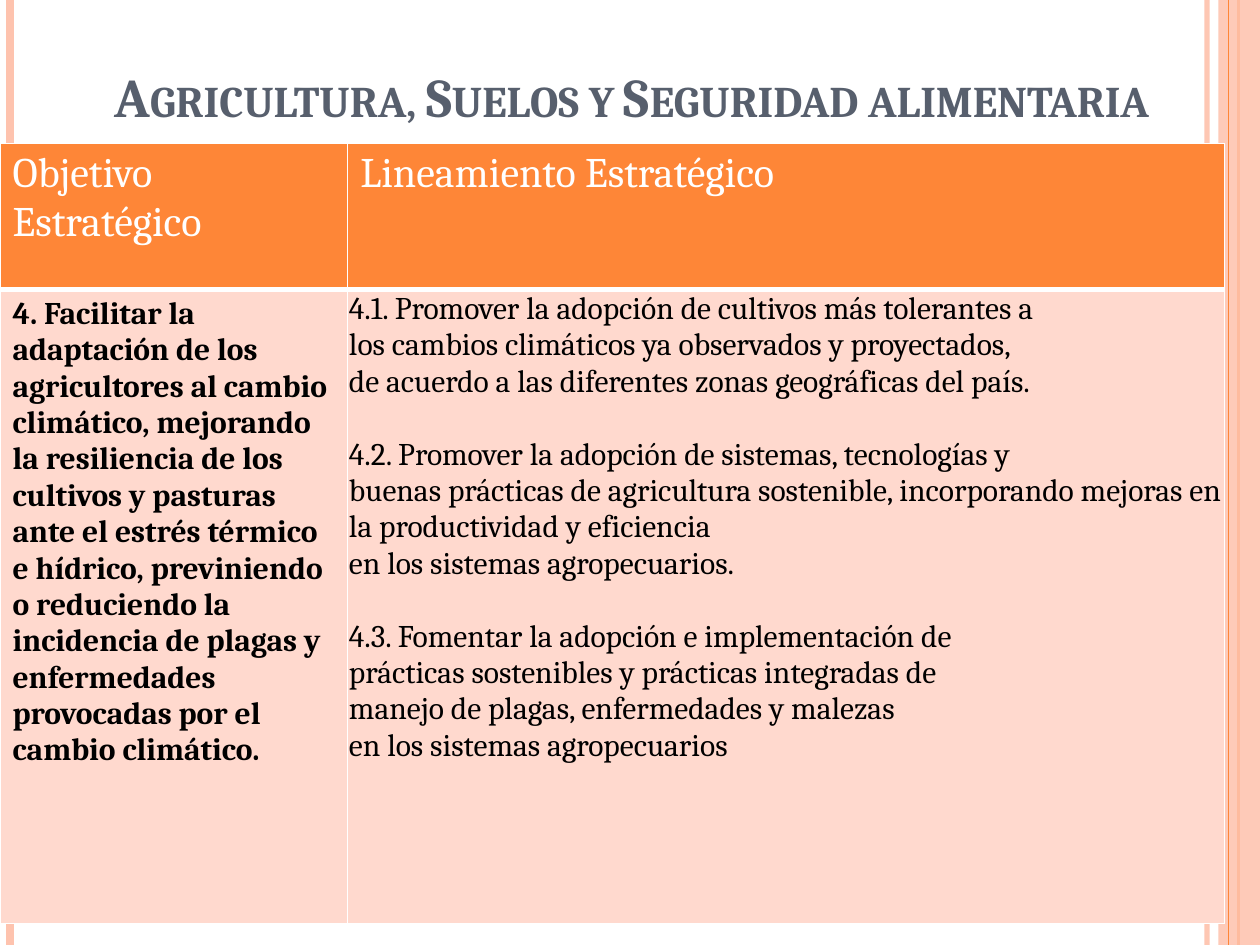
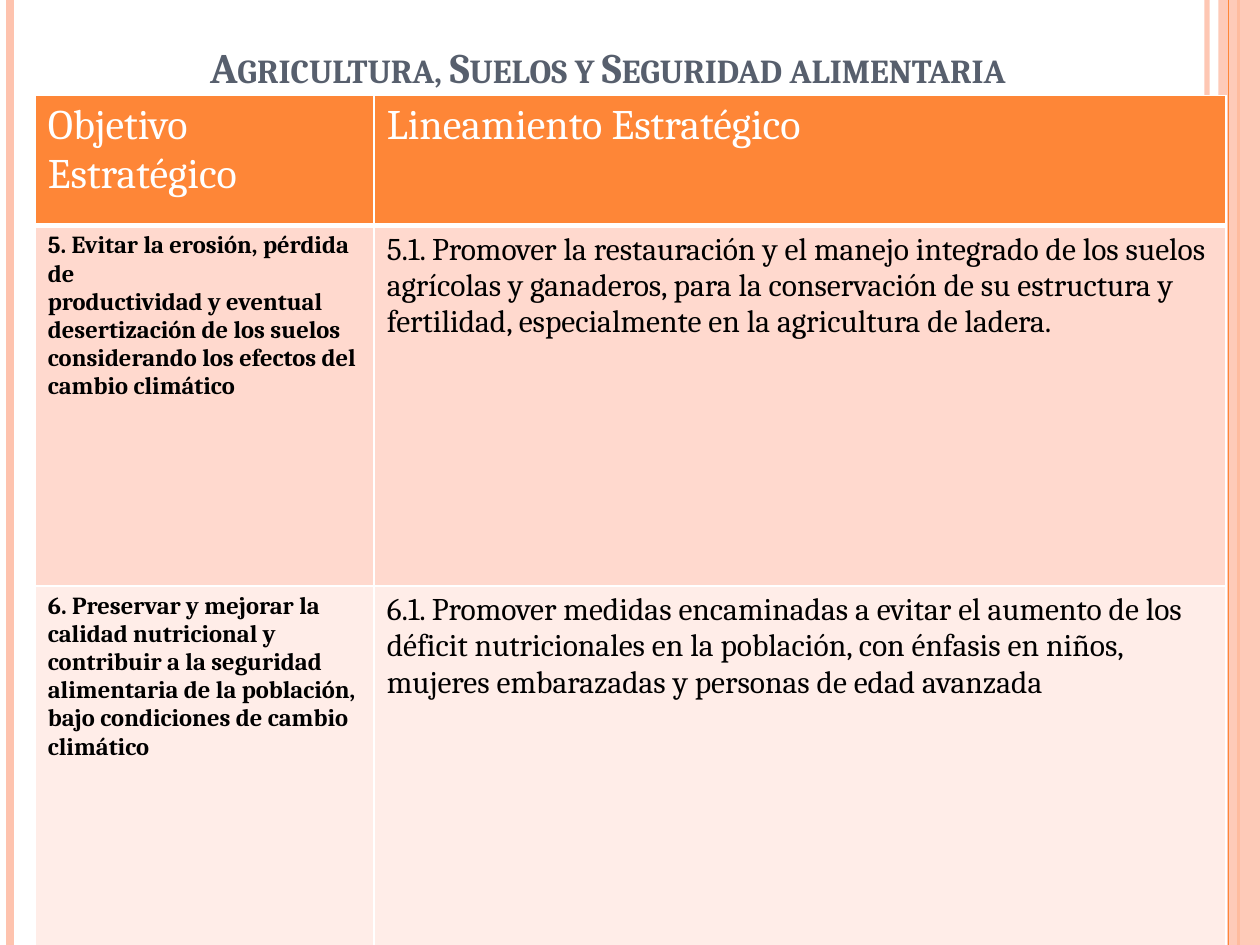
from dataclasses import dataclass

from lxml import etree
from pptx import Presentation
from pptx.dml.color import RGBColor
from pptx.enum.shapes import MSO_CONNECTOR, MSO_SHAPE
from pptx.enum.text import MSO_ANCHOR, PP_ALIGN
from pptx.oxml.ns import qn
from pptx.util import Emu, Pt

STRAIGHT = MSO_CONNECTOR.STRAIGHT
RECTANGLE = MSO_SHAPE.RECTANGLE
LEFT, CENTER = PP_ALIGN.LEFT, PP_ALIGN.CENTER
BOTTOM = MSO_ANCHOR.BOTTOM

EMU_PER_PX = 9144  # 100 px to the inch
SLIDE_WIDTH, SLIDE_HEIGHT = 1000, 750
FONT = "Cambria"
COLORS = {
    "orange": "FE8637",
    "peach": "FEC3AE",
    "slate": "575F6D",
    "row_dark": "FFD9CE",
    "row_light": "FFEDE8",
    "white": "FFFFFF",
    "black": "000000",
}
TITLE = "Agricultura, Suelos y Seguridad alimentaria"
HEADINGS = ("Objetivo Estratégico", "Lineamiento Estratégico")


@dataclass(frozen=True)
class Rule:
    x: int
    color: str
    weight: float
    opacity: int = 100


@dataclass(frozen=True)
class Title:
    left: int
    width: int
    height: int
    size: float
    bottom_inset: int = 5


@dataclass(frozen=True)
class CellContent:
    """Groups of paragraphs; a blank line's height separates the groups."""
    groups: tuple[tuple[str, ...], ...]
    size: float = 18
    bold: bool = False
    color: str = "black"
    tight: bool = False


@dataclass(frozen=True)
class StrategyTable:
    left: int
    top: int
    columns: tuple[int, ...]
    row_heights: tuple[int, ...]
    body: tuple[tuple[CellContent, ...], ...]


LEFT_RULES = (
    Rule(958, "peach", 3, 93),
    Rule(8, "peach", 4.5),
    Rule(983, "orange", 1.5),
)
BAND_RULE = Rule(975, "orange", 0.75)
BAND_LEFT, BAND_OPACITY = 967, 87

HEADER = tuple(
    CellContent(((heading,),), size=24, color="white") for heading in HEADINGS
)

ADAPTATION = StrategyTable(
    0, 114, (276, 696), (116, 503),
    ((
        CellContent(((
            "4. Facilitar la adaptación de los agricultores al cambio climático, "
            "mejorando la resiliencia de los cultivos y pasturas ante el estrés "
            "térmico e hídrico, previniendo o reduciendo la incidencia de plagas y",
            "enfermedades provocadas por el cambio climático.",
        ),), bold=True),
        CellContent((
            (
                "4.1. Promover la adopción de cultivos más tolerantes a",
                "los cambios climáticos ya observados y proyectados,",
                "de acuerdo a las diferentes zonas geográficas del país.",
            ),
            (
                "4.2. Promover la adopción de sistemas, tecnologías y",
                "buenas prácticas de agricultura sostenible, incorporando "
                "mejoras en la productividad y eficiencia",
                "en los sistemas agropecuarios.",
            ),
            (
                "4.3. Fomentar la adopción e implementación de",
                "prácticas sostenibles y prácticas integradas de",
                "manejo de plagas, enfermedades y malezas",
                "en los sistemas agropecuarios",
            ),
        ), tight=True),
    ),),
)

SOIL_AND_FOOD = StrategyTable(
    28, 76, (269, 676), (103, 286, 286),
    (
        (
            CellContent(((
                "5. Evitar la erosión, pérdida de",
                "productividad y eventual",
                "desertización de los suelos",
                "considerando los efectos del",
                "cambio climático",
            ),), size=14, bold=True),
            CellContent(((
                "5.1. Promover la restauración y el manejo integrado de los suelos "
                "agrícolas y ganaderos, para la conservación de su estructura y "
                "fertilidad, especialmente en la agricultura de ladera.",
            ),)),
        ),
        (
            CellContent(((
                "6. Preservar y mejorar la calidad nutricional y",
                "contribuir a la seguridad",
                "alimentaria de la población,",
                "bajo condiciones de cambio",
                "climático",
            ),), size=14, bold=True),
            CellContent(((
                "6.1. Promover medidas encaminadas a evitar el aumento de los "
                "déficit nutricionales en la población, con énfasis en niños, "
                "mujeres embarazadas y personas de edad avanzada",
            ),)),
        ),
    ),
)

SLIDES = (
    (Title(35, 933, 107, 31.2), ADAPTATION),
    (Title(0, 965, 81, 24, bottom_inset=8), SOIL_AND_FOOD),
)


def px(length: int) -> Emu:
    return Emu(length * EMU_PER_PX)


def rgb(name: str) -> RGBColor:
    return RGBColor.from_string(COLORS[name])


def set_opacity(element, percent: int) -> None:
    if percent < 100:
        for color in element.iter(qn("a:srgbClr")):
            etree.SubElement(color, qn("a:alpha"), val=str(percent * 1000))


def write_text(frame, groups, *, size: float, color: str, bold: bool = False,
               alignment=LEFT, small_caps: bool = False) -> None:
    frame.word_wrap = True
    paragraph = None
    for group_index, group in enumerate(groups):
        for line_index, line in enumerate(group):
            paragraph = frame.add_paragraph() if paragraph else frame.paragraphs[0]
            paragraph.alignment = alignment
            if group_index and line_index == 0:
                paragraph.space_before = Pt(round(size * 1.16, 1))
            run = paragraph.add_run()
            run.text = line
            run.font.name = FONT
            run.font.size = Pt(size)
            run.font.bold = bold
            run.font.color.rgb = rgb(color)
            if small_caps:
                run.font._element.set("cap", "small")


def draw_rule(slide, rule: Rule) -> None:
    connector = slide.shapes.add_connector(
        STRAIGHT, px(rule.x), px(0), px(rule.x), px(SLIDE_HEIGHT))
    connector.line.color.rgb = rgb(rule.color)
    connector.line.width = Pt(rule.weight)
    properties = connector._element.spPr
    set_opacity(properties, rule.opacity)
    etree.SubElement(properties, qn("a:effectLst"))


def draw_frame(slide) -> None:
    """Draw the vertical rules and the right-hand band."""
    for rule in LEFT_RULES:
        draw_rule(slide, rule)
    band = slide.shapes.add_shape(
        RECTANGLE, px(BAND_LEFT), px(0),
        px(SLIDE_WIDTH - BAND_LEFT), px(SLIDE_HEIGHT))
    band.shadow.inherit = False
    band.fill.solid()
    band.fill.fore_color.rgb = rgb("peach")
    band.line.fill.background()
    set_opacity(band._element.spPr, BAND_OPACITY)
    draw_rule(slide, BAND_RULE)


def draw_title(slide, title: Title) -> None:
    box = slide.shapes.add_textbox(
        px(title.left), px(0), px(title.width), px(title.height))
    frame = box.text_frame
    frame.vertical_anchor = BOTTOM
    frame.margin_bottom = px(title.bottom_inset)
    write_text(frame, ((TITLE,),), size=title.size, color="slate", bold=True,
               alignment=CENTER, small_caps=True)


def set_borders(cell, bottom_weight: float) -> None:
    properties = cell._tc.get_or_add_tcPr()
    weights = {"lnL": 1, "lnR": 1, "lnT": 1, "lnB": bottom_weight}
    for position, (side, weight) in enumerate(weights.items()):
        border = etree.Element(qn(f"a:{side}"), w=str(Pt(weight)))
        fill = etree.SubElement(border, qn("a:solidFill"))
        etree.SubElement(fill, qn("a:srgbClr"), val=COLORS["white"])
        properties.insert(position, border)


def fill_cell(cell, content: CellContent, fill: str, bottom_weight: float) -> None:
    cell.fill.solid()
    cell.fill.fore_color.rgb = rgb(fill)
    if content.tight:
        cell.margin_left = cell.margin_top = cell.margin_right = px(1)
        cell.margin_bottom = px(0)
    set_borders(cell, bottom_weight)
    write_text(cell.text_frame, content.groups, size=content.size,
               color=content.color, bold=content.bold)


def draw_table(slide, layout: StrategyTable) -> None:
    rows = (HEADER, *layout.body)
    fills = ("orange", "row_dark", "row_light")
    table = slide.shapes.add_table(
        len(rows), len(layout.columns), px(layout.left), px(layout.top),
        px(sum(layout.columns)), px(sum(layout.row_heights))).table
    for column, width in zip(table.columns, layout.columns):
        column.width = px(width)
    for row_index, (contents, height, fill) in enumerate(
            zip(rows, layout.row_heights, fills)):
        table.rows[row_index].height = px(height)
        for column_index, content in enumerate(contents):
            fill_cell(table.cell(row_index, column_index), content, fill,
                      bottom_weight=1 if row_index else 3)


def main() -> None:
    presentation = Presentation()
    presentation.slide_width = px(SLIDE_WIDTH)
    presentation.slide_height = px(SLIDE_HEIGHT)
    blank_layout = presentation.slide_layouts[6]
    for title, table in SLIDES:
        slide = presentation.slides.add_slide(blank_layout)
        draw_frame(slide)
        draw_table(slide, table)
        draw_title(slide, title)
    presentation.save("out.pptx")


if __name__ == "__main__":
    main()
